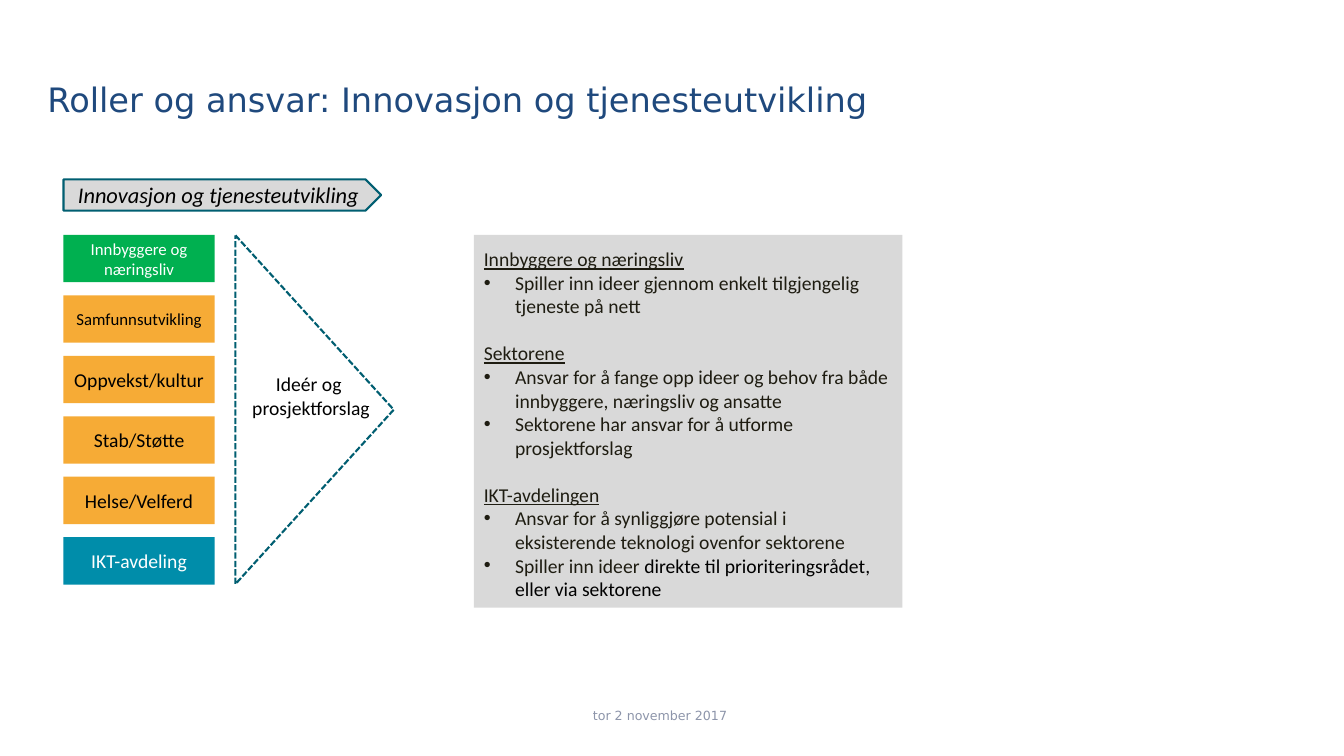
from lxml.etree import SubElement
from pptx import Presentation
from pptx.dml.color import RGBColor
from pptx.enum.dml import MSO_LINE_DASH_STYLE as Dash
from pptx.enum.shapes import MSO_SHAPE as Shape
from pptx.enum.text import MSO_ANCHOR as Anchor, PP_ALIGN as Align
from pptx.oxml.ns import qn
from pptx.util import Inches, Pt

BLACK, WHITE, INK = "000000", "FFFFFF", "1E1C11"
GREY, ORANGE, GREEN, BLUE, TEAL = "D9D9D9", "F6AB36", "00B050", "008DAA", "005E71"

CONTRIBUTORS = [
    ("Innbyggere og næringsliv", 12, GREEN, WHITE),
    ("Samfunnsutvikling", 12, ORANGE, BLACK),
    ("Oppvekst/kultur", 14, ORANGE, BLACK),
    ("Stab/Støtte", 14, ORANGE, BLACK),
    ("Helse/Velferd", 14, ORANGE, BLACK),
    ("IKT-avdeling", 14, BLUE, WHITE),
]

RESPONSIBILITIES = [
    ("Innbyggere og næringsliv", [
        [("Spiller inn ideer gjennom enkelt tilgjengelig tjeneste på nett", INK)],
    ]),
    ("Sektorene", [
        [("Ansvar for å fange opp ideer og behov fra både innbyggere, næringsliv og ansatte", INK)],
        [("Sektorene har ansvar for å utforme prosjektforslag", INK)],
    ]),
    ("IKT-avdelingen", [
        [("Ansvar for å synliggjøre potensial i eksisterende teknologi ovenfor sektorene", INK)],
        [("Spiller inn ideer ", INK),
         ("direkte til prioriteringsrådet, eller via sektorene", BLACK)],
    ]),
]


def rgb(value):
    """Turn a hex string into a colour."""
    return RGBColor.from_string(value)


def box(left, top, width, height):
    """Return a position and size in inches."""
    return [Inches(length) for length in (left, top, width, height)]


def add_run(paragraph, text, size, color, font="Calibri"):
    """Append a formatted run and return it."""
    run = paragraph.add_run()
    run.text = text
    run.font.name = font
    run.font.size = Pt(size)
    run.font.color.rgb = rgb(color)
    return run


def add_block(slide, kind, place, fill=None, outline=None):
    """Add a preset shape without shadow."""
    block = slide.shapes.add_shape(kind, *box(*place))
    block.shadow.inherit = False
    if fill:
        block.fill.solid()
        block.fill.fore_color.rgb = rgb(fill)
    else:
        block.fill.background()
    if outline:
        block.line.color.rgb = rgb(outline)
        block.line.width = Pt(1.5)
    else:
        block.line.fill.background()
    return block


def write_centred(holder, lines, size, color, font="Calibri"):
    """Write centred lines in the middle of a shape and return the runs."""
    frame = holder.text_frame
    frame.word_wrap = True
    frame.vertical_anchor = Anchor.MIDDLE
    runs = []
    for index, line in enumerate(lines):
        paragraph = frame.add_paragraph() if index else frame.paragraphs[0]
        paragraph.alignment = Align.CENTER
        runs.append(add_run(paragraph, line, size, color, font))
    return runs


def add_title(slide, text):
    """Place and fill the title placeholder."""
    title = slide.shapes.title
    title.left, title.top, title.width, title.height = box(0.37, 0.36, 10.09, 1.25)
    title.text_frame.vertical_anchor = Anchor.MIDDLE
    paragraph = title.text_frame.paragraphs[0]
    paragraph.alignment = Align.LEFT
    add_run(paragraph, text, 24, "1F497D", "DejaVu Sans")


def add_label(slide, place, lines, size, color, font="Calibri"):
    """Add a centred text box."""
    write_centred(slide.shapes.add_textbox(*box(*place)), lines, size, color, font)


def add_bullet(paragraph):
    """Give a paragraph a hanging bullet."""
    properties = paragraph._p.get_or_add_pPr()
    properties.set("marL", str(Inches(0.31)))
    properties.set("indent", str(Inches(-0.31)))
    SubElement(properties, qn("a:buFont"), typeface="Arial")
    SubElement(properties, qn("a:buChar"), char="•")


def add_responsibilities(slide):
    """Add the grey panel with each role and its duties."""
    panel = add_block(slide, Shape.RECTANGLE, (4.7, 2.33, 4.25, 3.7), GREY)
    frame = panel.text_frame
    frame.word_wrap = True
    frame.vertical_anchor = Anchor.TOP
    frame.margin_top = Inches(0.12)
    for index, (role, duties) in enumerate(RESPONSIBILITIES):
        heading = frame.add_paragraph() if index else frame.paragraphs[0]
        heading.alignment = Align.LEFT
        if index:
            heading.space_before = Pt(17)
        add_run(heading, role, 14, INK).font.underline = True
        for duty in duties:
            item = frame.add_paragraph()
            item.alignment = Align.LEFT
            add_bullet(item)
            for text, color in duty:
                add_run(item, text, 14, color)


def main():
    """Build and save the slide."""
    deck = Presentation()
    deck.slide_width, deck.slide_height = Inches(13.33), Inches(7.5)
    slide = deck.slides.add_slide(deck.slide_layouts[5])
    add_title(slide, "Roller og ansvar: Innovasjon og tjenesteutvikling")
    add_label(slide, (4.99, 6.9, 3.11, 0.4), ["tor 2 november 2017"], 9, "8D95AA", "DejaVu Sans")

    funnel = add_block(slide, Shape.ISOSCELES_TRIANGLE, (1.39, 3.28, 3.46, 1.57), outline=TEAL)
    funnel.rotation = 90
    funnel.line.dash_style = Dash.SQUARE_DOT
    add_label(slide, (2.26, 3.75, 1.65, 0.35), ["Ideér og ", "prosjektforslag"], 14, BLACK)

    phase = add_block(slide, Shape.PENTAGON, (0.63, 1.78, 3.15, 0.31), GREY, TEAL)
    for run in write_centred(phase, ["Innovasjon og tjenesteutvikling"], 16, BLACK):
        run.font.italic = True

    for row, (name, size, fill, color) in enumerate(CONTRIBUTORS):
        place = (0.63, 2.33 + 0.6 * row, 1.5, 0.47)
        contributor = add_block(slide, Shape.RECTANGLE, place, fill)
        write_centred(contributor, [name], size, color)

    add_responsibilities(slide)
    deck.save("out.pptx")


if __name__ == "__main__":
    main()
